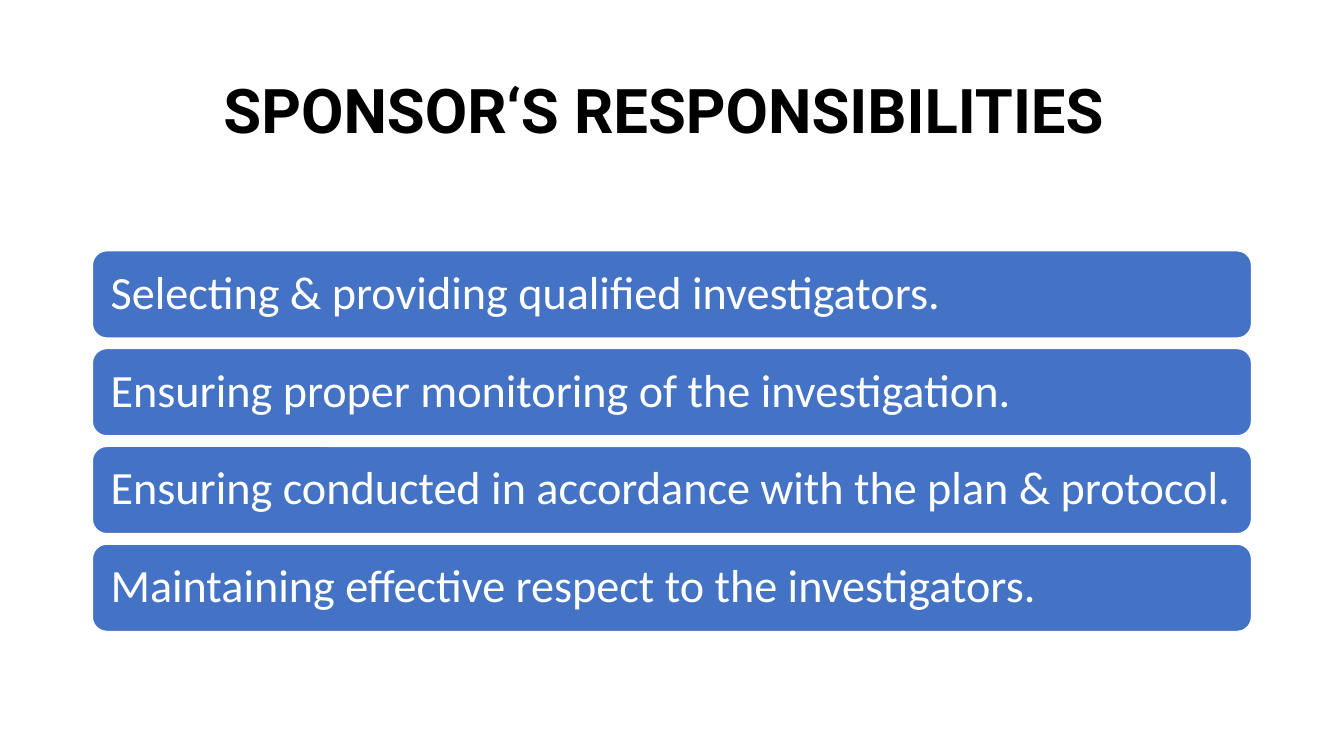
"""Build the slide on the sponsor's responsibilities."""
from pptx import Presentation
from pptx.dml.color import RGBColor
from pptx.enum import shapes, text
from pptx.util import Pt

TITLE = "SPONSOR‘S RESPONSIBILITIES "
DUTIES = [
    "Selecting & providing qualified investigators.",
    "Ensuring proper monitoring of the investigation.",
    "Ensuring conducted in accordance with the plan & protocol.",
    "Maintaining effective respect to the investigators.",
]
LEFT, WIDTH = 66, 828
BAR_TOP, BAR_HEIGHT, BAR_STEP = 179.1, 62.4, 69.85


def color(value):
    return RGBColor.from_string(value)


def write(box, words, align, font_name, size, shade, bold=False):
    frame = box.text_frame
    frame.word_wrap = True
    frame.vertical_anchor = text.MSO_ANCHOR.MIDDLE
    para = frame.paragraphs[0]
    para.text = words
    para.alignment = align
    para.line_spacing = 0.9
    para.font.name = font_name
    para.font.size = Pt(size)
    para.font.bold = bold
    para.font.color.rgb = color(shade)


def add_duty(page, index, duty):
    bar = page.shapes.add_shape(
        shapes.MSO_SHAPE.ROUNDED_RECTANGLE,
        Pt(LEFT), Pt(BAR_TOP + index * BAR_STEP), Pt(WIDTH), Pt(BAR_HEIGHT))
    bar.shadow.inherit = False
    bar.fill.solid()
    bar.fill.fore_color.rgb = color("4472C4")
    bar.line.color.rgb = color("FFFFFF")
    bar.line.width = Pt(1)
    bar.text_frame.margin_left = Pt(10)
    bar.text_frame.margin_right = Pt(5)
    write(bar, duty, text.PP_ALIGN.LEFT, "Calibri", 33, "FFFFFF")


def main():
    deck = Presentation()
    deck.slide_width, deck.slide_height = Pt(960), Pt(540)
    page = deck.slides.add_slide(deck.slide_layouts[5])
    title = page.shapes.title
    title.left, title.top = Pt(LEFT), Pt(28.75)
    title.width, title.height = Pt(WIDTH), Pt(104.4)
    write(title, TITLE, text.PP_ALIGN.CENTER, "Roboto", 44, "000000", bold=True)
    for index, duty in enumerate(DUTIES):
        add_duty(page, index, duty)
    deck.save("out.pptx")


if __name__ == "__main__":
    main()
